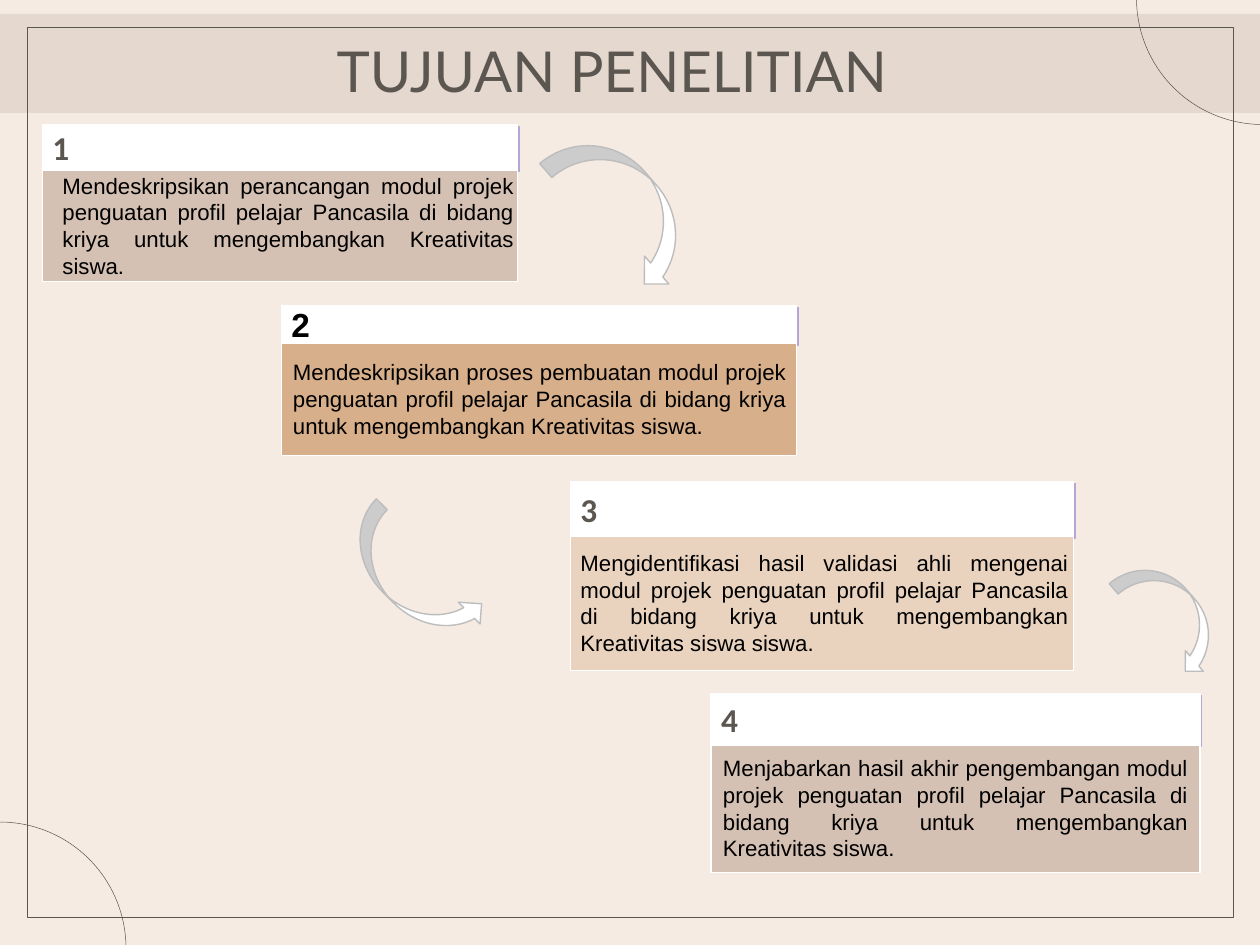
from dataclasses import dataclass

from lxml.etree import SubElement
from pptx import Presentation
from pptx.dml.color import RGBColor as Rgb
from pptx.enum.shapes import MSO_SHAPE as Kind
from pptx.enum.text import MSO_ANCHOR as Anchor, MSO_AUTO_SIZE as Fit, PP_ALIGN as Align
from pptx.oxml.ns import qn
from pptx.shapes.autoshape import Shape
from pptx.slide import Slide
from pptx.text.text import TextFrame
from pptx.util import Inches, Length, Pt

COLS, ROWS = 252, 189
WIDTH, HEIGHT = Inches(25.2), Inches(18.9)
PAD, GAP = 1, 0.5
LINE = 5.4


@dataclass(frozen=True)
class Theme:
    page: str = "F5EBE2"
    band: str = "E4D8CF"
    ink: str = "5C5651"
    text: str = "000000"
    white: str = "FFFFFF"
    shade: str = "B4A7D6"
    edge: str = "BDBDBD"
    mauve: str = "D4C1B3"
    tan: str = "D7AF8A"
    sand: str = "E9D3BF"
    title: float = 81.2
    number: float = 48
    body: float = 32


@dataclass(frozen=True)
class Box:
    left: float
    top: float
    wide: float
    high: float

    def place(self) -> tuple[Length, Length, Length, Length]:
        return (col(self.left), row(self.top), col(self.wide), row(self.high))


@dataclass(frozen=True)
class Card:
    left: float
    top: float
    wide: float
    head: float
    base: float
    inset: float
    span: float
    lines: int
    fill: str
    text: str
    font: str = "Calibri"
    ink: str = Theme.ink


@dataclass(frozen=True)
class Arrow:
    kind: Kind
    box: Box
    turn: float


@dataclass(frozen=True)
class Curve:
    box: Box
    start: float
    end: float


THEME = Theme()
CARDS = [
    Card(8.5, 25, 95, 9, 22.4, 3, 92.3, 4, THEME.mauve,
         "Mendeskripsikan perancangan modul projek penguatan profil pelajar "
         "Pancasila di bidang kriya untuk mengembangkan Kreativitas siswa."),
    Card(56.3, 61.2, 103.1, 7.4, 22.5, 1.3, 100.7, 3, THEME.tan,
         "Mendeskripsikan proses pembuatan modul projek penguatan profil pelajar "
         "Pancasila di bidang kriya untuk mengembangkan Kreativitas siswa.",
         "Arial", THEME.text),
    Card(114.1, 96.4, 100.6, 10.8, 26.9, 1, 99.6, 4, THEME.sand,
         "Mengidentifikasi hasil validasi ahli mengenai modul projek penguatan profil "
         "pelajar Pancasila di bidang kriya untuk mengembangkan Kreativitas siswa siswa."),
    Card(142.2, 138.7, 97.8, 10.3, 25.5, 1.4, 95, 4, THEME.mauve,
         "Menjabarkan hasil akhir pengembangan modul projek penguatan profil pelajar "
         "Pancasila di bidang kriya untuk mengembangkan Kreativitas siswa."),
]
ARROWS = [
    Arrow(Kind.CURVED_LEFT_ARROW, Box(117.8, 23.5, 14.8, 35.6), 319),
    Arrow(Kind.CURVED_RIGHT_ARROW, Box(76.4, 99.3, 12.3, 32.8), 314.9),
    Arrow(Kind.CURVED_LEFT_ARROW, Box(229, 110, 10.9, 25.9), 319),
]
CURVES = [
    Curve(Box(227.3, -25.6, 50.5, 50.5), 54, 108),
    Curve(Box(-25.3, 164.4, 50.5, 50.5), 162, 0),
]


def col(count: float) -> Length:
    return Length(round(WIDTH * count / COLS))


def row(count: float) -> Length:
    return Length(round(HEIGHT * count / ROWS))


def draw(slide: Slide, kind: Kind, box: Box, fill: str | None,
         edge: str, weight: float) -> Shape:
    shape = slide.shapes.add_shape(kind, *box.place())
    shape.shadow.inherit = False
    if fill:
        shape.fill.solid()
        shape.fill.fore_color.rgb = Rgb.from_string(fill)
    else:
        shape.fill.background()
    shape.line.color.rgb = Rgb.from_string(edge)
    shape.line.width = Pt(weight)
    return shape


def write(frame: TextFrame, text: str, font: str, size: float, ink: str,
          align: Align, bold: bool = False) -> None:
    frame.word_wrap = True
    para = frame.paragraphs[0]
    para.text = text
    para.alignment = align
    para.font.name = font
    para.font.size = Pt(size)
    para.font.bold = bold
    para.font.color.rgb = Rgb.from_string(ink)


def pad(frame: TextFrame, left: float, rest: float) -> None:
    frame.margin_left = col(left)
    frame.margin_right = col(rest)
    frame.margin_top = frame.margin_bottom = row(rest)


def cast(shape: Shape) -> None:
    effects = shape._element.spPr.find(qn("a:effectLst"))
    shade = SubElement(effects, qn("a:outerShdw"), blurRad="0",
                       dist=str(Pt(3.8)), dir=str(50 * 60000),
                       algn="bl", rotWithShape="0")
    SubElement(shade, qn("a:srgbClr"), val=THEME.shade)


def add_card(slide: Slide, number: int, card: Card) -> None:
    head = draw(slide, Kind.RECTANGLE, Box(card.left, card.top, card.wide, card.head),
                THEME.white, THEME.white, 1.5)
    cast(head)
    pad(head.text_frame, 2 * PAD, PAD)
    head.text_frame.vertical_anchor = Anchor.MIDDLE
    write(head.text_frame, str(number), card.font, THEME.number, card.ink,
          Align.LEFT, True)

    base = card.top + card.head
    draw(slide, Kind.RECTANGLE, Box(card.left, base, card.wide, card.base),
         card.fill, THEME.white, 1.5)
    high = card.lines * LINE + 2 * GAP
    area = Box(card.left + card.inset, base + (card.base - high) / 2, card.span, high)
    note = slide.shapes.add_textbox(*area.place())
    write(note.text_frame, card.text, "Arial", THEME.body, THEME.text, Align.JUSTIFY)
    note.text_frame.auto_size = Fit.SHAPE_TO_FIT_TEXT


def add_title(slide: Slide, text: str) -> None:
    title = slide.shapes.title
    title.left, title.top, title.width, title.height = Box(5, 7.2, 234.8, 16.3).place()
    frame = title.text_frame
    frame.auto_size = Fit.NONE
    frame.vertical_anchor = Anchor.BOTTOM
    pad(frame, 2.8, 2.8)
    write(frame, text, "Lato", THEME.title, THEME.ink, Align.CENTER)
    slide.shapes._spTree.append(title._element)


def main() -> None:
    deck = Presentation()
    deck.slide_width, deck.slide_height = WIDTH, HEIGHT
    slide = deck.slides.add_slide(deck.slide_layouts[5])
    slide.background.fill.solid()
    slide.background.fill.fore_color.rgb = Rgb.from_string(THEME.page)

    draw(slide, Kind.RECTANGLE, Box(0, 2.8, COLS, 19.7), THEME.band, THEME.band, 0.75)
    draw(slide, Kind.RECTANGLE, Box(5.4, 5.5, 241.2, 178), None, THEME.ink, 0.75)
    for curve in CURVES:
        arc = draw(slide, Kind.ARC, curve.box, None, THEME.ink, 0.75)
        arc.adjustments[0], arc.adjustments[1] = curve.start, curve.end
    add_title(slide, "TUJUAN PENELITIAN")
    for number, card in enumerate(CARDS, 1):
        add_card(slide, number, card)
    for arrow in ARROWS:
        shape = draw(slide, arrow.kind, arrow.box, THEME.white, THEME.edge, 2)
        shape.rotation = arrow.turn
    deck.save("out.pptx")


if __name__ == "__main__":
    main()
